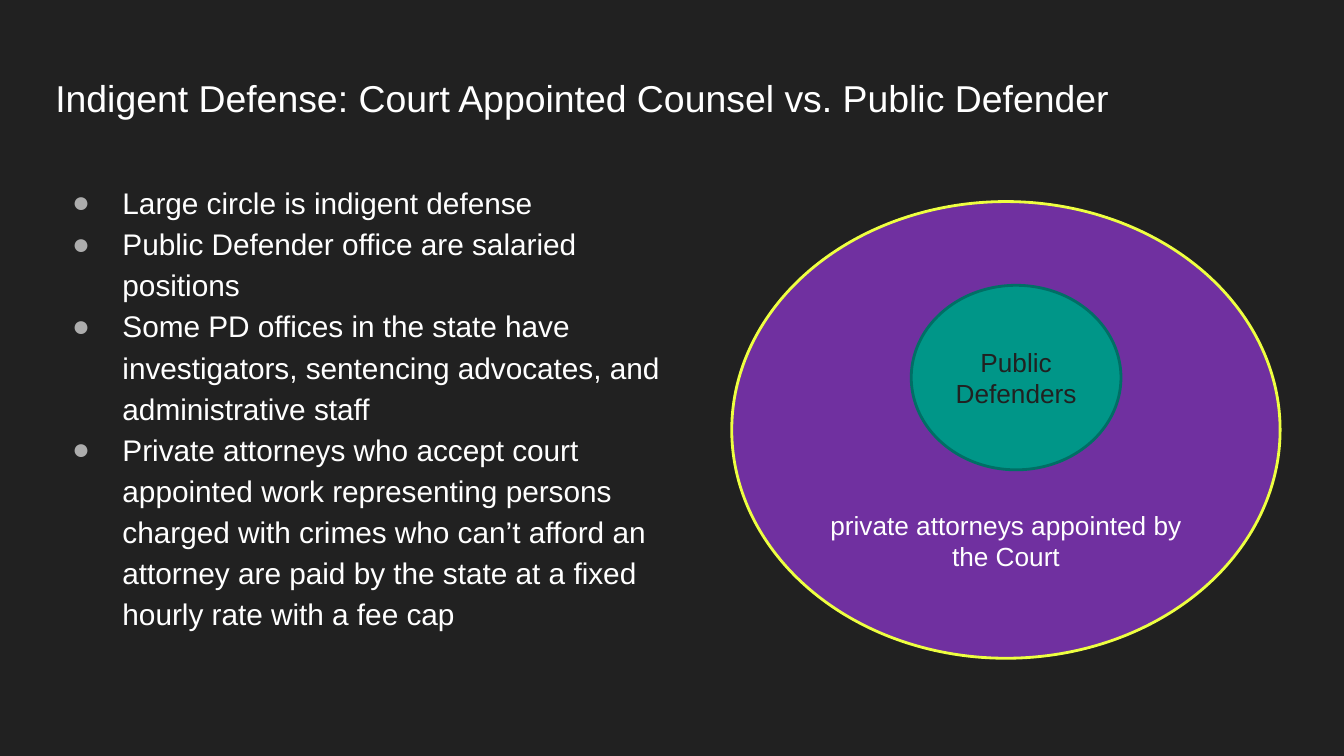
from lxml.etree import SubElement
from pptx import Presentation
from pptx.dml.color import RGBColor
from pptx.enum.shapes import MSO_SHAPE as Geom
from pptx.enum.text import MSO_ANCHOR as Anchor, PP_ALIGN as Align
from pptx.oxml.ns import qn
from pptx.util import Pt

WIDE, HIGH = 960, 540
DARK, WHITE, GREY = "212121", "FFFFFF", "ADADAD"
TITLE = "Indigent Defense: Court Appointed Counsel vs. Public Defender"
POINTS = [
    "Large circle is indigent defense",
    "Public Defender office are salaried positions",
    "Some PD offices in the state have investigators, sentencing advocates, "
    "and administrative staff",
    "Private attorneys who accept court appointed work representing persons "
    "charged with crimes who can’t afford an attorney are paid by the state "
    "at a fixed hourly rate with a fee cap",
]
# text, box, fill, line, text colour, top and bottom inset
OVALS = [
    ("private attorneys appointed by the Court", (522.7, 144, 391.7, 326.2),
     "7030A0", "EEFF41", WHITE, (162, 4)),
    ("Public Defenders", (650.9, 203.8, 149.8, 131.8),
     "009688", "006F65", DARK, (3.6, 3.6)),
]


def color(text):
    return RGBColor.from_string(text)


def put(obj, **vals):
    """Set each named value on obj."""
    for name, val in vals.items():
        setattr(obj, name, val)


def write(frame, lines, size, ink, **fmt):
    """Fill a text frame, one paragraph a line."""
    frame.word_wrap = True
    for i, line in enumerate(lines):
        para = frame.paragraphs[0] if i == 0 else frame.add_paragraph()
        put(para, **fmt)
        run = para.add_run()
        run.text = line
        put(run.font, name="Arial", size=Pt(size))
        run.font.color.rgb = color(ink)


def add_text(slide, box, lines, size, **fmt):
    frame = slide.shapes.add_textbox(*map(Pt, box)).text_frame
    sides = ("left", "top", "right", "bottom")
    put(frame, **{f"margin_{side}": Pt(7.2) for side in sides})
    write(frame, lines, size, WHITE, **fmt)
    return frame


def add_bullet(para):
    props = para._p.get_or_add_pPr()
    props.set("marL", str(Pt(48)))
    props.set("indent", str(Pt(-36)))
    tint = SubElement(props, qn("a:buClr"))
    SubElement(tint, qn("a:srgbClr"), val=GREY)
    SubElement(props, qn("a:buFont"), typeface="Arial")
    SubElement(props, qn("a:buChar"), char="●")


def add_oval(slide, text, box, fill, line, ink, pads):
    oval = slide.shapes.add_shape(Geom.OVAL, *map(Pt, box))
    oval.shadow.inherit = False
    oval.fill.solid()
    oval.fill.fore_color.rgb = color(fill)
    oval.line.color.rgb = color(line)
    oval.line.width = Pt(2)
    top, bottom = map(Pt, pads)
    put(oval.text_frame, margin_top=top, margin_bottom=bottom,
        vertical_anchor=Anchor.MIDDLE)
    write(oval.text_frame, [text], 18.7, ink, alignment=Align.CENTER)


def main():
    deck = Presentation()
    put(deck, slide_width=Pt(WIDE), slide_height=Pt(HIGH))
    slide = deck.slides.add_slide(deck.slide_layouts[6])
    slide.background.fill.solid()
    slide.background.fill.fore_color.rgb = color(DARK)
    add_text(slide, (32.4, 46.8, 894.2, 60.5), [TITLE], 26.7)
    body = add_text(slide, (32.4, 121, 447.1, 372.2), POINTS, 21.3,
                    line_spacing=1.15)
    for para in body.paragraphs:
        add_bullet(para)
    for oval in OVALS:
        add_oval(slide, *oval)
    deck.save("out.pptx")


if __name__ == "__main__":
    main()
